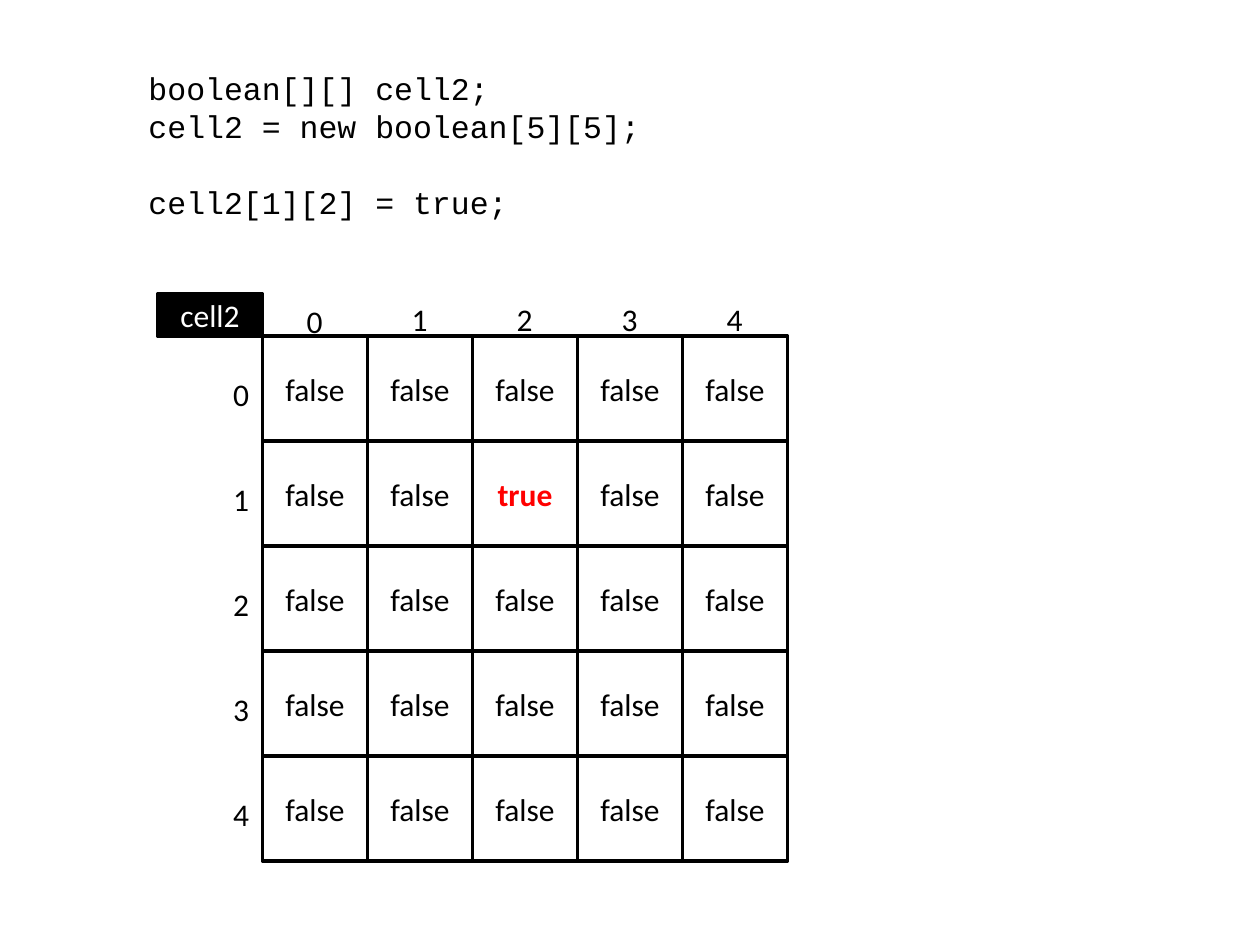
from pptx import Presentation
from pptx.dml.color import RGBColor
from pptx.enum.shapes import MSO_SHAPE
from pptx.enum.text import MSO_ANCHOR, MSO_AUTO_SIZE, PP_ALIGN
from pptx.util import Inches, Pt

BLACK = RGBColor(0x00, 0x00, 0x00)
WHITE = RGBColor(0xFF, 0xFF, 0xFF)
RED = RGBColor(0xFF, 0x00, 0x00)

# Content: each code line with the space above it in points
CODE = [
    ("boolean[][] cell2;", 0),
    ("cell2 = new boolean[5][5];", 0),
    ("cell2[1][2] = true;", 21.75),
]
ARRAY_NAME = "cell2"
SIZE = 5
TRUE_CELLS = {(1, 2)}

# Grid geometry in inches
CELL = 5 / 6
GRID_LEFT = 2.5 * CELL
GRID_TOP = 3.2 * CELL
NAME_HEIGHT = 0.4 * CELL
INDEX_WIDTH, INDEX_HEIGHT = 0.33, 0.4


def style(paragraph, color=BLACK, name="Calibri", bold=None):
    font = paragraph.font
    font.size = Pt(18)
    font.name = name
    font.bold = bold
    font.color.rgb = color


def add_box(slide, left, top, height, text, fill, color, bold=None):
    shape = slide.shapes.add_shape(
        MSO_SHAPE.RECTANGLE, Inches(left), Inches(top), Inches(CELL), Inches(height))
    shape.shadow.inherit = False
    shape.fill.solid()
    shape.fill.fore_color.rgb = fill
    shape.line.color.rgb = BLACK
    shape.line.width = Pt(2)
    frame = shape.text_frame
    frame.vertical_anchor = MSO_ANCHOR.MIDDLE
    paragraph = frame.paragraphs[0]
    paragraph.text = text
    paragraph.alignment = PP_ALIGN.CENTER
    style(paragraph, color, bold=bold)


def add_label(slide, left, top, width, height):
    label = slide.shapes.add_textbox(
        Inches(left), Inches(top), Inches(width), Inches(height))
    frame = label.text_frame
    frame.word_wrap = False
    frame.auto_size = MSO_AUTO_SIZE.SHAPE_TO_FIT_TEXT
    return frame


def add_index(slide, left, top, index):
    frame = add_label(slide, left, top, INDEX_WIDTH, INDEX_HEIGHT)
    paragraph = frame.paragraphs[0]
    paragraph.text = str(index)
    style(paragraph)


def main():
    presentation = Presentation()
    presentation.slide_width = Inches(10)
    presentation.slide_height = Inches(7.5)
    slide = presentation.slides.add_slide(presentation.slide_layouts[6])

    # Code
    frame = add_label(slide, 1.08, 0.5, 4.12, 1.31)
    for number, (line, space) in enumerate(CODE):
        paragraph = frame.add_paragraph() if number else frame.paragraphs[0]
        paragraph.text = line
        paragraph.space_before = Pt(space)
        style(paragraph, name="Courier New")

    # Array name
    add_box(slide, GRID_LEFT - CELL, GRID_TOP - NAME_HEIGHT, NAME_HEIGHT,
            ARRAY_NAME, BLACK, WHITE)

    # Cells
    for row in range(SIZE):
        for column in range(SIZE):
            is_true = (row, column) in TRUE_CELLS
            add_box(slide, GRID_LEFT + column * CELL, GRID_TOP + row * CELL, CELL,
                    "true" if is_true else "false", WHITE,
                    RED if is_true else BLACK, bold=is_true)

    # Row and column indices; the first column index sits slightly lower
    for index in range(SIZE):
        offset = index * CELL
        add_index(slide, GRID_LEFT - INDEX_WIDTH, GRID_TOP + 0.26 + offset, index)
        column_top = 2.35 if index == 0 else 2.33
        add_index(slide, GRID_LEFT + (CELL - INDEX_WIDTH) / 2 + offset,
                  column_top, index)

    presentation.save("out.pptx")


if __name__ == "__main__":
    main()
